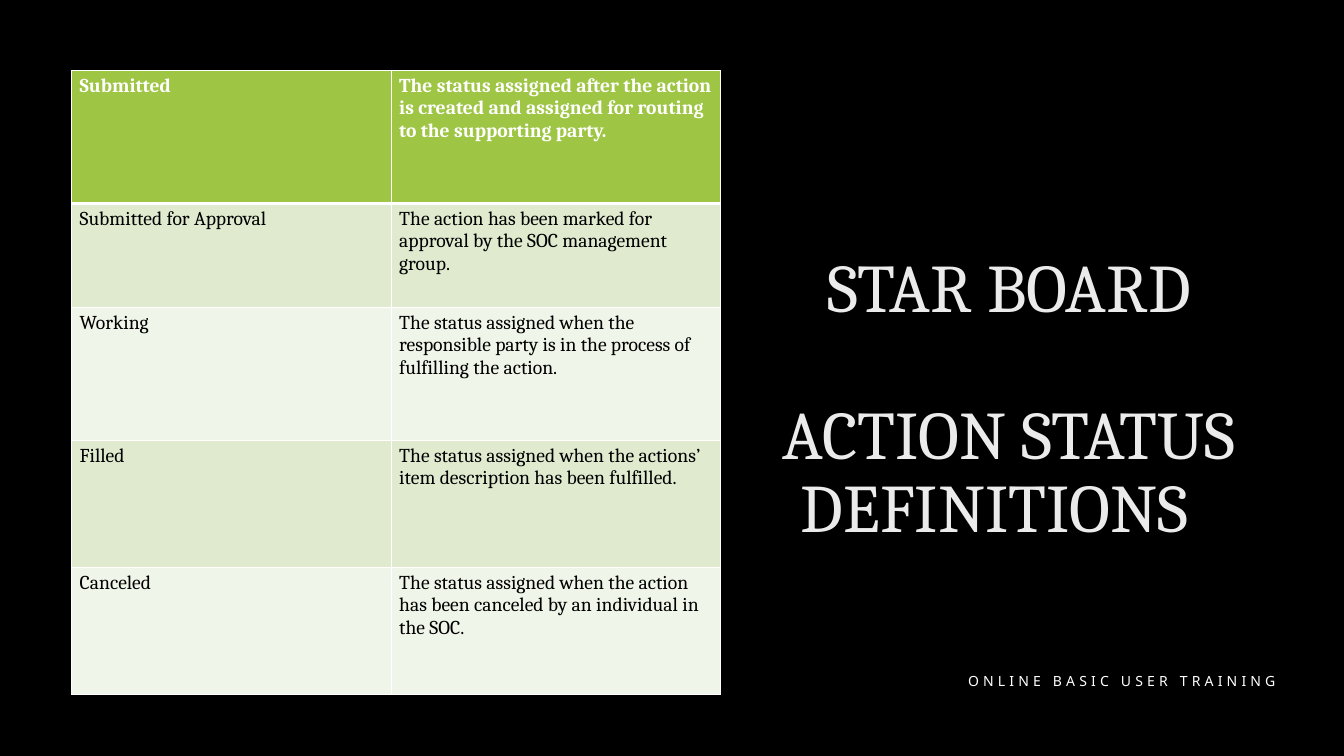
from dataclasses import dataclass

from lxml import etree
from pptx import Presentation
from pptx.dml.color import RGBColor
from pptx.enum.text import MSO_ANCHOR, MSO_AUTO_SIZE, PP_ALIGN
from pptx.oxml.ns import qn
from pptx.util import Inches, Pt

CENTER, RIGHT = PP_ALIGN.CENTER, PP_ALIGN.RIGHT
BOTTOM, FIT_SHAPE = MSO_ANCHOR.BOTTOM, MSO_AUTO_SIZE.SHAPE_TO_FIT_TEXT
SERIF, SANS = "Cambria", "Noto Sans"
BLACK, WHITE, TITLE_GRAY = "000000", "FFFFFF", "EBEBEB"
HEADER_GREEN, BANDS = "9EC544", ("F0F5E9", "DFEACF")
COLUMN_WIDTHS = (3.17, 3.27)


@dataclass
class Status:
    name: str
    definition: str
    height: float


@dataclass
class TitleLine:
    text: str
    space_before: float = 0
    right_indent: float = 0


STATUSES = [
    Status("Submitted", "The status assigned after the action is created and "
           "assigned for routing to the supporting party.", 1.32),
    Status("Submitted for Approval", "The action has been marked for approval "
           "by the SOC management group.", 1.03),
    Status("Working", "The status assigned when the responsible party is in "
           "the process of fulfilling the action.", 1.32),
    Status("Filled", "The status assigned when the actions’ item description "
           "has been fulfilled.", 1.26),
    Status("Canceled", "The status assigned when the action has been canceled "
           "by an individual in the SOC.", 1.26),
]
TITLE = [
    TitleLine("STAR BOARD"),
    TitleLine("ACTION STATUS", space_before=52.5),
    TitleLine("DEFINITIONS", right_indent=0.28),
]


def rgb(color: str) -> RGBColor:
    return RGBColor.from_string(color)


def add_run(p, text: str, color: str, **formats):
    r = p.add_run()
    r.text = text
    r.font.color.rgb = rgb(color)
    for name, value in formats.items():
        setattr(r.font, name, value)
    return r


def add_box(s, left: float, top: float, width: float, height: float, **formats):
    box = s.shapes.add_textbox(Inches(left), Inches(top), Inches(width), Inches(height))
    for name, value in formats.items():
        setattr(box.text_frame, name, value)
    return box.text_frame


def set_border(cell, side: str, points: float) -> None:
    ln = etree.SubElement(cell._tc.get_or_add_tcPr(), qn(f"a:ln{side}"), w=str(Pt(points)))
    fill = etree.SubElement(ln, qn("a:solidFill"))
    etree.SubElement(fill, qn("a:srgbClr"), val=WHITE)


def draw_title(s) -> None:
    tf = add_box(s, 7.38, 2.03, 5.25, 3.45, word_wrap=True, vertical_anchor=BOTTOM)
    for i, line in enumerate(TITLE):
        p = tf.add_paragraph() if i else tf.paragraphs[0]
        p.alignment, p.line_spacing = CENTER, 0.9
        if line.space_before:
            p.space_before = Pt(line.space_before)
        if line.right_indent:
            p._p.get_or_add_pPr().set("marR", str(Inches(line.right_indent)))
        add_run(p, line.text, TITLE_GRAY, name=SERIF, size=Pt(48.6))


def draw_cell(cell, text: str, row: int) -> None:
    header = row == 0
    margins = {"margin_left": 0.08, "margin_right": 0.08,
               "margin_top": 0.04, "margin_bottom": 0.04}
    for name, value in margins.items():
        setattr(cell, name, Inches(value))
    # The rule under the header row is heavier
    borders = {"L": 1, "R": 1, "T": 3 if row == 1 else 1, "B": 3 if header else 1}
    for side, points in borders.items():
        set_border(cell, side, points)
    cell.fill.solid()
    cell.fill.fore_color.rgb = rgb(HEADER_GREEN if header else BANDS[row % 2])
    add_run(cell.text_frame.paragraphs[0], text, WHITE if header else BLACK,
            name=SERIF, size=Pt(14), bold=header)


def draw_table(s) -> None:
    table = s.shapes.add_table(len(STATUSES), len(COLUMN_WIDTHS), Inches(0.71), Inches(0.7),
                               Inches(sum(COLUMN_WIDTHS)),
                               Inches(sum(st.height for st in STATUSES))).table
    for column, width in zip(table.columns, COLUMN_WIDTHS):
        column.width = Inches(width)
    for row, status in enumerate(STATUSES):
        table.rows[row].height = Inches(status.height)
        for col, text in enumerate((status.name, status.definition)):
            draw_cell(table.cell(row, col), text, row)


def draw_footer(s) -> None:
    tf = add_box(s, 9.26, 6.62, 3.49, 0.27, word_wrap=False, auto_size=FIT_SHAPE)
    p = tf.paragraphs[0]
    p.alignment = RIGHT
    r = add_run(p, "ONLINE BASIC USER TRAINING", WHITE, name=SANS, size=Pt(10))
    r._r.get_or_add_rPr().set("spc", "300")


def main() -> None:
    prs = Presentation()
    prs.slide_width, prs.slide_height = Inches(13.33), Inches(7.5)
    s = prs.slides.add_slide(prs.slide_layouts[6])
    s.background.fill.solid()
    s.background.fill.fore_color.rgb = rgb(BLACK)
    draw_title(s)
    draw_table(s)
    draw_footer(s)
    prs.save("out.pptx")


if __name__ == "__main__":
    main()
